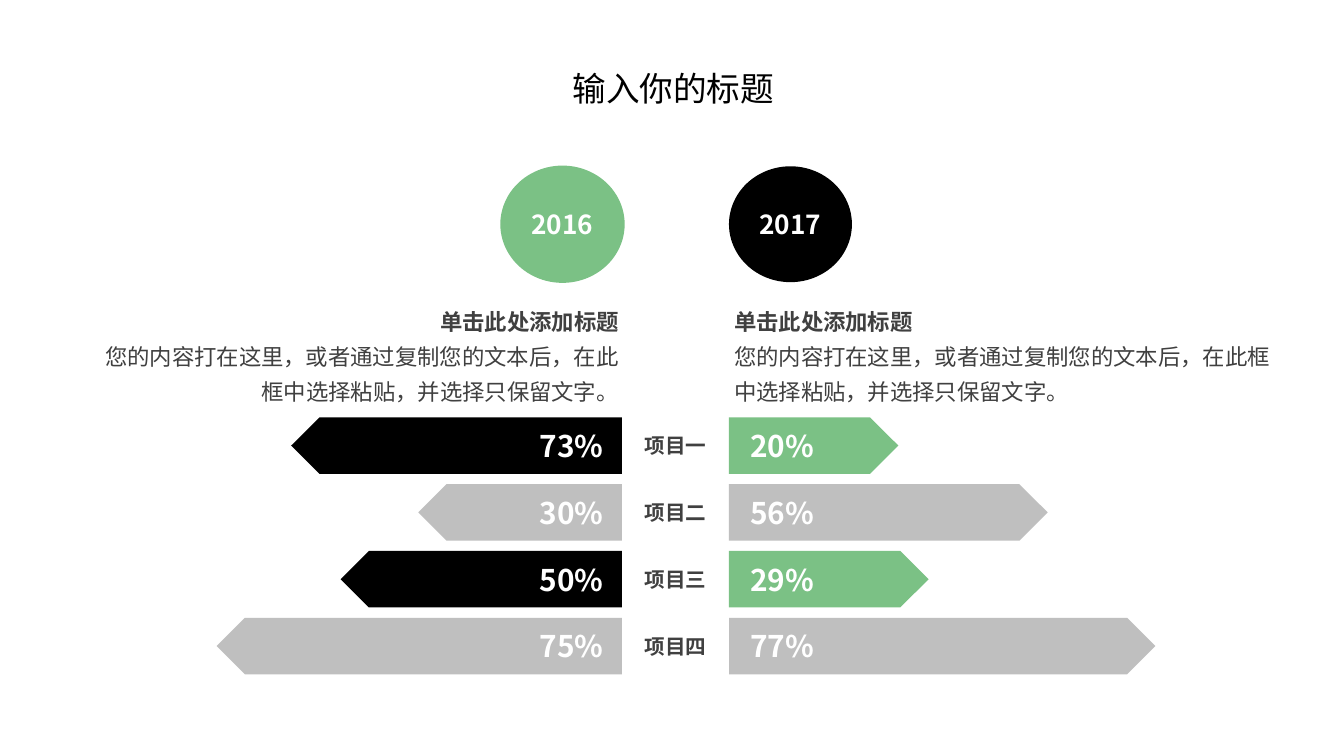
import dataclasses

import pptx
import pptx.dml.color
import pptx.enum.shapes
import pptx.enum.text
import pptx.oxml.ns
import pptx.util
from lxml import etree

ALIGN = pptx.enum.text.PP_ALIGN
ANCHOR = pptx.enum.text.MSO_ANCHOR
SHAPE = pptx.enum.shapes.MSO_SHAPE


@dataclasses.dataclass(frozen=True)
class Theme:
    font: str = "Noto Sans CJK SC"
    green: str = "7BC185"
    black: str = "000000"
    grey: str = "BFBFBF"
    dark: str = "404040"
    white: str = "FFFFFF"
    title_size: float = 24
    percent_size: float = 21.3
    year_size: float = 18.7
    body_size: float = 16
    label_size: float = 14.7


THEME = Theme()
SLIDE_WIDTH = pptx.util.Inches(13.33)
SLIDE_HEIGHT = pptx.util.Inches(7.5)

# Shares of the slide's width and height, in percent
LEFT_EDGE, RIGHT_EDGE = 46.28, 54.24
FIRST_ROW, ROW_STEP, BAR_HEIGHT = 55.2, 8.84, 7.47

HEADING = "单击此处添加标题"
BODY = "您的内容打在这里，或者通过复制您的文本后，在此框中选择粘贴，并选择只保留文字。"

# Label, left value and bar length, right value and bar length
ROWS = [
    ("项目一", "73%", 24.61, "20%", 12.6),
    ("项目二", "30%", 15.15, "56%", 23.71),
    ("项目三", "50%", 20.93, "29%", 14.85),
    ("项目四", "75%", 30.16, "77%", 31.73),
]


def place(left, top, width, height):
    return (round(SLIDE_WIDTH * left / 100), round(SLIDE_HEIGHT * top / 100),
            round(SLIDE_WIDTH * width / 100), round(SLIDE_HEIGHT * height / 100))


def rgb(color):
    return pptx.dml.color.RGBColor.from_string(color)


def add_run(paragraph, text, size, color, bold):
    run = paragraph.add_run()
    run.text = text
    run.font.name = THEME.font
    run.font.size = pptx.util.Pt(size)
    run.font.bold = bold
    run.font.color.rgb = rgb(color)
    # Chinese characters take the East Asian typeface
    east_asian = etree.SubElement(run.font._element, pptx.oxml.ns.qn("a:ea"))
    east_asian.set("typeface", THEME.font)


def add_text(slide, box, lines, size, color, align=ALIGN.CENTER, wrap=False):
    """Add a text box; lines holds (text, bold) pairs."""
    frame = slide.shapes.add_textbox(*place(*box)).text_frame
    frame.word_wrap = wrap
    frame.auto_size = pptx.enum.text.MSO_AUTO_SIZE.SHAPE_TO_FIT_TEXT
    for index, (text, bold) in enumerate(lines):
        paragraph = frame.add_paragraph() if index else frame.paragraphs[0]
        paragraph.alignment = align
        add_run(paragraph, text, size, color, bold)
    return frame


def add_solid(slide, kind, box, color):
    shape = slide.shapes.add_shape(kind, *place(*box))
    shape.shadow.inherit = False
    shape.fill.solid()
    shape.fill.fore_color.rgb = rgb(color)
    shape.line.fill.background()
    return shape


def add_year(slide, left, year, color):
    circle = add_solid(slide, SHAPE.OVAL, (left, 22, 9.15, 15.33), color)
    frame = circle.text_frame
    frame.vertical_anchor = ANCHOR.MIDDLE
    paragraph = frame.paragraphs[0]
    paragraph.alignment = ALIGN.CENTER
    add_run(paragraph, year, THEME.year_size, THEME.white, True)
    return circle


def add_description(slide, left, width, align):
    frame = add_text(slide, (left, 39.33, width, 14.67), [(HEADING, True), (BODY, False)],
                     THEME.body_size, THEME.dark, align, wrap=True)
    frame.margin_left = frame.margin_right = pptx.util.Inches(0.05)
    frame.margin_top = frame.margin_bottom = pptx.util.Inches(0.03)
    for paragraph in frame.paragraphs:
        paragraph.line_spacing = 1.3


def add_bar(slide, top, length, value, color, points_left):
    left = LEFT_EDGE - length if points_left else RIGHT_EDGE
    bar = add_solid(slide, SHAPE.PENTAGON, (left, top, length, BAR_HEIGHT), color)
    if points_left:
        bar._element.spPr.xfrm.set("flipH", "1")
    value_left = 39.35 if points_left else 54.99
    add_text(slide, (value_left, top + 0.72, 6.38, 6.13), [(value, True)],
             THEME.percent_size, THEME.white)


def main():
    presentation = pptx.Presentation()
    presentation.slide_width = SLIDE_WIDTH
    presentation.slide_height = SLIDE_HEIGHT
    slide = presentation.slides.add_slide(presentation.slide_layouts[6])

    # Title
    add_text(slide, (41.86, 8.27, 19.81, 6.67), [("输入你的标题", False)],
             THEME.title_size, THEME.black, ALIGN.LEFT, wrap=True)

    # Years and their descriptions
    first_year = add_year(slide, 37.28, "2016", THEME.green)
    first_year.line.color.rgb = rgb(THEME.green)
    first_year.line.width = pptx.util.Pt(1)
    add_year(slide, RIGHT_EDGE, "2017", THEME.black)
    add_description(slide, 6.68, 39.76, ALIGN.RIGHT)
    add_description(slide, RIGHT_EDGE, 40.66, ALIGN.LEFT)

    # Paired bars; every second row is grey
    for index, (label, left_value, left_length, right_value, right_length) in enumerate(ROWS):
        top = FIRST_ROW + index * ROW_STEP
        is_grey = index % 2 == 1
        add_bar(slide, top, left_length, left_value,
                THEME.grey if is_grey else THEME.black, True)
        add_bar(slide, top, right_length, right_value,
                THEME.grey if is_grey else THEME.green, False)
        add_text(slide, (47.19, top + 1.45, 6.15, 4.67), [(label, True)],
                 THEME.label_size, THEME.dark)

    presentation.save("out.pptx")


if __name__ == "__main__":
    main()
